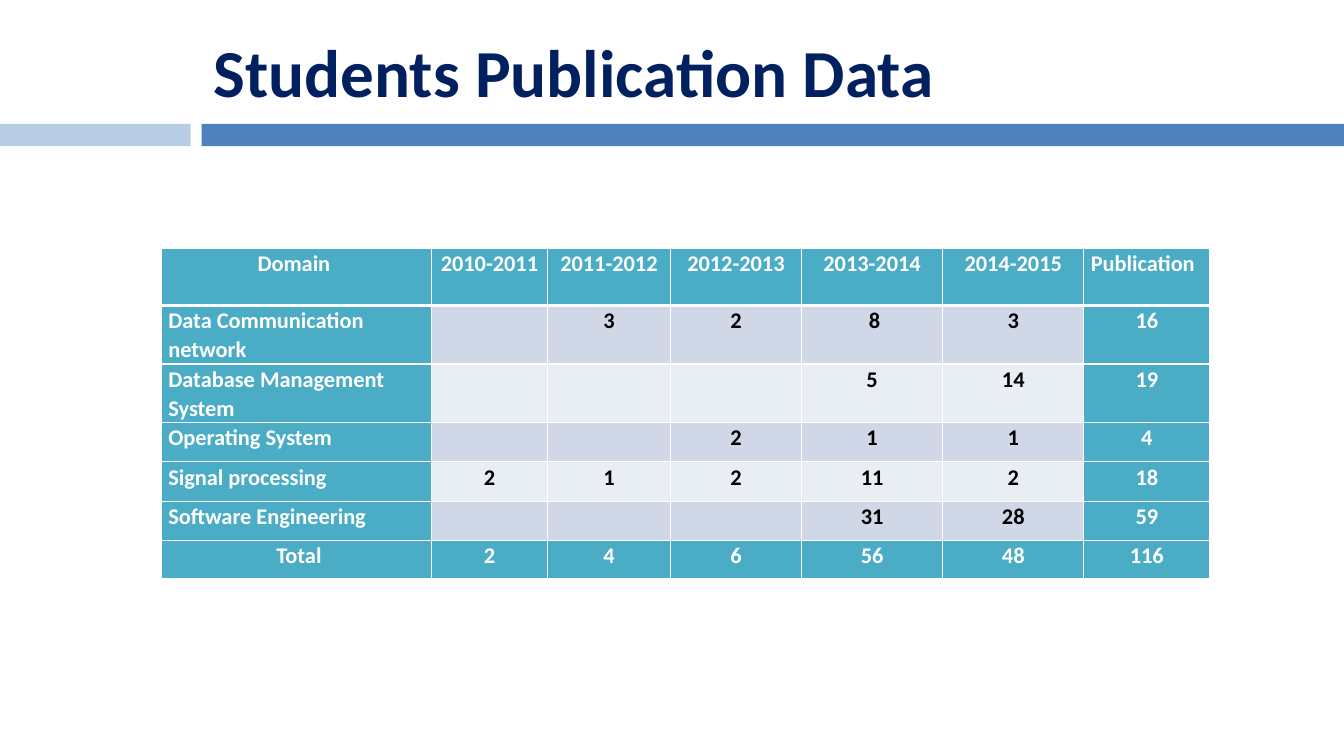
"""Build the slide of student publications by domain and year."""
from dataclasses import dataclass

from lxml import etree
from pptx import Presentation
from pptx import util as u
from pptx.dml.color import RGBColor
from pptx.enum import shapes, text
from pptx.oxml.ns import qn

COLOURS = {
    "white": "FFFFFF",
    "black": "000000",
    "navy": "002060",
    "pale_blue": "B9CDE5",
    "blue": "4F81BD",
    "teal": "4BACC6",
    "dark_band": "D0D8E8",
    "light_band": "E9EDF4",
}
FONT = "Calibri"
COLUMN_WIDTHS = (2.68, 1.15, 1.22, 1.3, 1.4, 1.4, 1.25)
ROW_HEIGHTS = (0.57, 0.58, 0.58, 0.39, 0.39, 0.39, 0.38)
ROWS = (
    ("Domain ", "2010-2011", "2011-2012", "2012-2013", "2013-2014", "2014-2015", "Publication"),
    ("Data Communication network", "", "3", "2", " 8", "3", "16"),
    ("Database Management System", "", "", "", "5", "14", "19"),
    ("Operating System", "", "", "2", "1", "1", "4"),
    ("Signal processing", "2", "1", "2", "11", "2", "18"),
    ("Software Engineering", "", "", "", "31", "28", "59"),
    (" Total", "2", "4", "6", "56", "48", "116"),
)
LAST_ROW = len(ROWS) - 1
LAST_COLUMN = len(COLUMN_WIDTHS) - 1


@dataclass(frozen=True)
class Bar:
    """A plain rectangle of the heading band."""

    left: float
    top: float
    width: float
    height: float
    colour: str


BARS = (
    Bar(0, 1.15, 13.33, 0.4, "white"),
    Bar(0, 1.23, 1.89, 0.22, "pale_blue"),
    Bar(2, 1.23, 11.33, 0.22, "blue"),
)


def rgb(name: str) -> RGBColor:
    """Return the named colour."""
    return RGBColor.from_string(COLOURS[name])


def add_span(para, words: str, size: float, colour: str) -> None:
    """Add one bold run to a paragraph."""
    span = para.add_run()
    span.text = words
    span.font.name = FONT
    span.font.size = u.Pt(size)
    span.font.bold = True
    span.font.color.rgb = rgb(colour)


def add_bar(page, bar: Bar) -> None:
    """Draw one bar without outline or shadow."""
    box = page.shapes.add_shape(
        shapes.MSO_SHAPE.RECTANGLE,
        *(u.Inches(length) for length in (bar.left, bar.top, bar.width, bar.height)),
    )
    box.shadow.inherit = False
    box.fill.solid()
    box.fill.fore_color.rgb = rgb(bar.colour)
    box.line.fill.background()


def set_title(page) -> None:
    """Place and fill the title placeholder."""
    box = page.shapes.title
    box.left, box.top = u.Inches(2), u.Inches(0.15)
    box.width, box.height = u.Inches(11.22), u.Inches(1.1)
    frame = box.text_frame
    frame.word_wrap = True
    frame.auto_size = text.MSO_AUTO_SIZE.NONE
    frame.vertical_anchor = text.MSO_ANCHOR.MIDDLE
    frame.margin_left = frame.margin_right = u.Inches(0.12)
    frame.margin_top = frame.margin_bottom = u.Inches(0.06)
    para = frame.paragraphs[0]
    para.alignment = text.PP_ALIGN.LEFT
    add_span(para, "Students Publication Data", 48, "navy")


def add_borders(cell, row: int) -> None:
    """Give a cell white borders, thicker under the header row."""
    properties = cell._tc.get_or_add_tcPr()
    thick_side = {0: "lnB", 1: "lnT"}.get(row)
    for side in ("lnL", "lnR", "lnT", "lnB"):
        width = u.Pt(3 if side == thick_side else 1)
        line = etree.SubElement(properties, qn(f"a:{side}"), w=str(width))
        fill = etree.SubElement(line, qn("a:solidFill"))
        etree.SubElement(fill, qn("a:srgbClr"), val=COLOURS["white"])


def format_cell(cell, row: int, column: int, words: str) -> None:
    """Fill one cell according to its place in the table."""
    is_edge = row in (0, LAST_ROW) or column in (0, LAST_COLUMN)
    is_label = column == 0 and 0 < row < LAST_ROW
    is_left = is_label or (row == 0 and column == LAST_COLUMN)
    band = "dark_band" if row % 2 else "light_band"
    add_borders(cell, row)
    cell.fill.solid()
    cell.fill.fore_color.rgb = rgb("teal" if is_edge else band)
    cell.margin_left = cell.margin_right = u.Inches(0.07)
    cell.margin_top = cell.margin_bottom = 0
    if words:
        para = cell.text_frame.paragraphs[0]
        para.alignment = text.PP_ALIGN.LEFT if is_left else text.PP_ALIGN.CENTER
        para.line_spacing = 1.07
        add_span(para, words, 16, "white" if is_edge else "black")


def add_publication_table(page) -> None:
    """Draw the table of publications."""
    table = page.shapes.add_table(
        len(ROWS), len(COLUMN_WIDTHS), u.Inches(1.6), u.Inches(2.46),
        u.Inches(sum(COLUMN_WIDTHS)), u.Inches(sum(ROW_HEIGHTS)),
    ).table
    for column, width in zip(table.columns, COLUMN_WIDTHS):
        column.width = u.Inches(width)
    for row, height in zip(table.rows, ROW_HEIGHTS):
        row.height = u.Inches(height)
    for row_index, values in enumerate(ROWS):
        for column_index, words in enumerate(values):
            cell = table.cell(row_index, column_index)
            format_cell(cell, row_index, column_index, words)


def main() -> None:
    """Build and save the deck."""
    deck = Presentation()
    deck.slide_width, deck.slide_height = u.Inches(13.33), u.Inches(7.5)
    page = deck.slides.add_slide(deck.slide_layouts.get_by_name("Title Only"))
    for bar in BARS:
        add_bar(page, bar)
    set_title(page)
    add_publication_table(page)
    deck.save("out.pptx")


if __name__ == "__main__":
    main()
